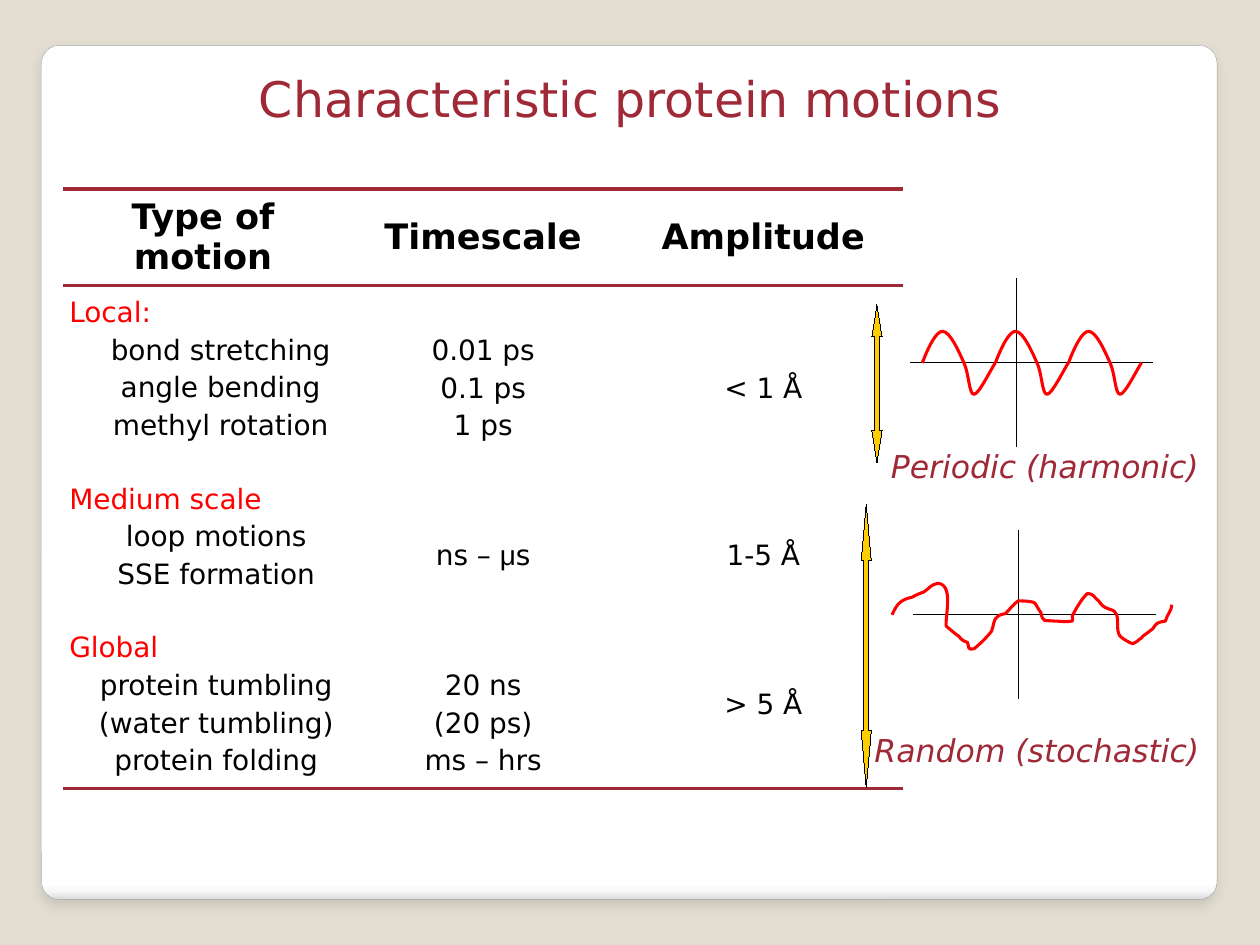
from dataclasses import dataclass
from itertools import groupby

from lxml.etree import SubElement
from pptx import Presentation
from pptx.dml.color import RGBColor
from pptx.enum.shapes import MSO_CONNECTOR, MSO_SHAPE
from pptx.enum.text import MSO_ANCHOR, PP_ALIGN
from pptx.oxml import parse_xml
from pptx.oxml.ns import nsdecls, qn
from pptx.util import Inches, Pt

COLORS = {
    "background": "E3DED1", "white": "FFFFFF", "edge": "A4A3A3",
    "shade": "DADADA", "shade_end": "F7F7F7", "shadow": "808080",
    "accent": "9F2936", "text": "000000", "red": "FF0000", "arrow": "FFCC00",
}
FONT = "DejaVu Sans"
HEADERS = ["Type of motion", "Timescale", "Amplitude"]
BLANK_LINE = 0.3  # offset that lines values up with the items below a heading
HEADER_HEIGHT, ROW_HEIGHT = 0.76, 1.33


@dataclass
class MotionRow:
    heading: str
    items: list[str]
    indent: float
    timescales: list[str]
    amplitude: str
    amplitude_offset: float = BLANK_LINE


@dataclass
class ScaleArrow:
    x: float
    top: float
    height: float
    head: float


@dataclass
class MotionPlot:
    """Axes given by centre point, with curves as a start and Bézier triples."""
    x: float
    y: float
    left: float
    curves: list[list[tuple[float, float]]]
    label: str
    label_box: tuple[float, float, float, float]


ROWS = [
    MotionRow("Local:", ["bond stretching", "angle bending", "methyl rotation"], 0.28,
              ["0.01 ps", "0.1 ps", "1 ps"], "< 1 Å"),
    MotionRow("Medium scale", ["loop motions", "SSE formation"], 0.21,
              ["ns – μs"], "1-5 Å"),
    MotionRow("Global", ["protein tumbling", "(water tumbling)", "protein folding"], 0.21,
              ["20 ns", "(20 ps)", "ms – hrs"], "> 5 Å", 0),
]
ARROWS = [ScaleArrow(6.96, 2.42, 1.25, 0.25), ScaleArrow(6.875, 4, 2.25, 0.45)]

PERIOD = 0.58
WAVE = [(7.32, 2.88), (7.37, 2.75), (7.43, 2.63), (7.48, 2.63),
        (7.54, 2.63), (7.61, 2.79), (7.65, 2.88), (7.69, 2.96), (7.69, 3.13),
        (7.73, 3.13), (7.77, 3.13), (7.87, 2.92), (7.9, 2.88)]
RANDOM_WALK = [
    (7.08, 4.88), (7.12, 4.79), (7.15, 4.76), (7.24, 4.74),
    (7.27, 4.72), (7.33, 4.7), (7.33, 4.7), (7.38, 4.67), (7.38, 4.64), (7.45, 4.63),
    (7.57, 4.65), (7.5, 4.89), (7.51, 4.97), (7.51, 4.97), (7.59, 5.04), (7.61, 5.05),
    (7.63, 5.08), (7.65, 5.09), (7.68, 5.1), (7.69, 5.14), (7.68, 5.16), (7.73, 5.15),
    (7.78, 5.11), (7.83, 5.06), (7.87, 5.01), (7.9, 4.92), (7.88, 4.89), (7.98, 4.87),
    (8.01, 4.84), (8.05, 4.79), (8.08, 4.77), (8.12, 4.77), (8.16, 4.77), (8.2, 4.78),
    (8.22, 4.78), (8.24, 4.84), (8.26, 4.86), (8.28, 4.95), (8.29, 4.92), (8.37, 4.93),
    (8.42, 4.93), (8.46, 4.94), (8.51, 4.93), (8.52, 4.92), (8.51, 4.9), (8.51, 4.89),
    (8.54, 4.83), (8.58, 4.76), (8.63, 4.71), (8.69, 4.72), (8.67, 4.73), (8.72, 4.77),
    (8.74, 4.8), (8.76, 4.82), (8.79, 4.83), (8.81, 4.84), (8.84, 4.84), (8.85, 4.86),
    (8.89, 4.9), (8.85, 5), (8.89, 5.05), (8.91, 5.07), (8.96, 5.1), (8.99, 5.11),
    (9.01, 5.1), (9.03, 5.09), (9.05, 5.07), (9.06, 5.07), (9.06, 5.06), (9.07, 5.05),
    (9.1, 5.03), (9.15, 4.99), (9.15, 4.99), (9.18, 4.94), (9.19, 4.94), (9.25, 4.93),
    (9.26, 4.88), (9.3, 4.85), (9.3, 4.8),
]
PLOTS = [
    MotionPlot(8.07, 2.88, 7.23, [[(x + i * PERIOD, y) for x, y in WAVE] for i in range(3)],
               "Periodic (harmonic)", (7.02, 3.5, 2.58, 0.41)),
    MotionPlot(8.08, 4.88, 7.25, [RANDOM_WALK],
               "Random (stochastic)", (6.89, 5.75, 2.71, 0.41)),
]


def rgb(name: str) -> RGBColor:
    return RGBColor.from_string(COLORS[name])


def set_line(sp, color: str, width: float) -> None:
    sp.line.color.rgb = rgb(color)
    sp.line.width = Pt(width)


def set_hairline(sp) -> None:
    """Give a black line of default width, free of the theme's line style."""
    sp.line.color.rgb = rgb("text")
    sp._element.remove(sp._element.find(qn("p:style")))


def add_run(p, text: str, color: str, size: float, name: str = FONT, **extra) -> None:
    r = p.add_run()
    r.text = text
    for key, value in {"name": name, "size": Pt(size), **extra}.items():
        setattr(r.font, key, value)
    r.font.color.rgb = rgb(color)


def set_margins(frame) -> None:
    for side in ("left", "top", "right", "bottom"):
        setattr(frame, f"margin_{side}", Inches(0.05))


def add_card(s) -> None:
    sp = s.shapes.add_shape(MSO_SHAPE.ROUNDED_RECTANGLE, Inches(0.33), Inches(0.36),
                            Inches(9.33), Inches(6.78))
    sp.adjustments[0] = 0.021
    set_line(sp, "edge", 0.25)
    stops = [(0, "shade"), (1, "shade_end"), (2, "white"), (100, "white")]
    gs = "".join(f'<a:gs pos="{pos * 1000}"><a:srgbClr val="{COLORS[c]}"/></a:gs>'
                 for pos, c in stops)
    sp.line._ln.addprevious(parse_xml(
        f'<a:gradFill {nsdecls("a")} rotWithShape="1"><a:gsLst>{gs}</a:gsLst>'
        '<a:lin ang="16200000" scaled="0"/></a:gradFill>'))
    sp.line._ln.addnext(parse_xml(
        f'<a:effectLst {nsdecls("a")}><a:outerShdw blurRad="{Pt(6)}" dist="{Pt(4)}" '
        f'dir="5400000" algn="tl" rotWithShape="0"><a:srgbClr val="{COLORS["shadow"]}">'
        '<a:alpha val="25000"/></a:srgbClr></a:outerShdw></a:effectLst>'))


def add_text(s, box: tuple, text: str, size: float, wrap: bool, align, **extra) -> None:
    tf = s.shapes.add_textbox(*map(Inches, box)).text_frame
    set_margins(tf)
    tf.word_wrap = wrap
    tf.vertical_anchor = MSO_ANCHOR.MIDDLE if wrap else MSO_ANCHOR.TOP
    p = tf.paragraphs[0]
    p.alignment = align
    add_run(p, text, "accent", size, **extra)


def set_borders(cell, visible: tuple) -> None:
    for tag in ("lnL", "lnR", "lnT", "lnB"):
        ln = SubElement(cell._tc.get_or_add_tcPr(), qn(f"a:{tag}"), w=str(Pt(2.25)))
        if tag in visible:
            SubElement(SubElement(ln, qn("a:solidFill")), qn("a:srgbClr"), val=COLORS["accent"])
        else:
            SubElement(ln, qn("a:noFill"))


def fill_cell(cell, lines: list[str], size: float = 16, bold: bool = False, heading: str = "",
              indent: float = 0, offset: float = 0, borders: tuple = ()) -> None:
    """Write centred lines under an optional red heading; offset lowers the text."""
    set_margins(cell)
    cell.margin_top = Inches(0.05 + offset)
    cell.vertical_anchor = MSO_ANCHOR.MIDDLE
    tf = cell.text_frame
    for i, text in enumerate([heading] * bool(heading) + lines):
        p = tf.add_paragraph() if i else tf.paragraphs[0]
        is_heading = bool(heading) and i == 0
        p.alignment = PP_ALIGN.LEFT if is_heading else PP_ALIGN.CENTER
        if i:
            p.space_before = Pt(3)
        if indent and not is_heading:
            p._p.get_or_add_pPr().set("marL", str(Inches(indent)))
        for greek, chars in groupby(text, lambda ch: ch == "μ"):
            add_run(p, "".join(chars), "red" if is_heading else "text", size,
                    "Arial" if greek else FONT, bold=bold)
    set_borders(cell, borders)
    cell.fill.background()


def add_motion_table(s) -> None:
    height = HEADER_HEIGHT + ROW_HEIGHT * len(ROWS)
    table = s.shapes.add_table(len(ROWS) + 1, len(HEADERS), Inches(0.5), Inches(1.5),
                               Inches(6.67), Inches(height)).table
    table.first_row = table.horz_banding = False
    table._tbl.tblPr.find(qn("a:tableStyleId")).text = "{2D5ABB26-0587-4C30-8999-92F81FD0307C}"
    for i, row in enumerate(table.rows):
        row.height = Inches(ROW_HEIGHT if i else HEADER_HEIGHT)
    for col, text in enumerate(HEADERS):
        fill_cell(table.cell(0, col), [text], 20, True, borders=("lnT", "lnB"))
    for i, row in enumerate(ROWS, 1):
        borders = {1: ("lnT",), len(ROWS): ("lnB",)}.get(i, ())
        fill_cell(table.cell(i, 0), row.items, heading=row.heading, indent=row.indent,
                  borders=borders)
        fill_cell(table.cell(i, 1), row.timescales, offset=BLANK_LINE, borders=borders)
        fill_cell(table.cell(i, 2), [row.amplitude], offset=row.amplitude_offset,
                  borders=borders)


def add_outline(s, points: list[tuple[float, float]], close: bool):
    (start, *rest) = [tuple(map(Inches, pt)) for pt in points]
    builder = s.shapes.build_freeform(*start)
    builder.add_line_segments(rest, close=close)
    sp = builder.convert_to_shape()
    sp.shadow.inherit = False
    return sp


def add_scale_arrow(s, arrow: ScaleArrow) -> None:
    bottom = arrow.top + arrow.height
    neck, base = arrow.top + arrow.head, bottom - arrow.head
    side = [(0.04, neck), (0.02, neck), (0.02, base), (0.04, base)]
    points = [(arrow.x, arrow.top), *[(arrow.x + dx, y) for dx, y in side],
              (arrow.x, bottom), *[(arrow.x - dx, y) for dx, y in reversed(side)]]
    sp = add_outline(s, points, True)
    sp.fill.solid()
    sp.fill.fore_color.rgb = rgb("arrow")
    set_hairline(sp)


def add_axis(s, x1: float, y1: float, x2: float, y2: float) -> None:
    sp = s.shapes.add_connector(MSO_CONNECTOR.STRAIGHT, *map(Inches, (x1, y1, x2, y2)))
    set_hairline(sp)
    SubElement(sp._element.spPr, qn("a:effectLst"))


def add_curve(s, points: list[tuple[float, float]]) -> None:
    """Draw an outline whose points, taken in threes, are Bézier segments."""
    sp = add_outline(s, points, False)
    segments = list(sp._element.iter(qn("a:lnTo")))
    for i in range(0, len(segments), 3):
        bezier = SubElement(segments[i].getparent(), qn("a:cubicBezTo"))
        for segment in segments[i:i + 3]:
            bezier.append(segment[0])
            segment.getparent().remove(segment)
    sp.fill.background()
    set_line(sp, "red", 1.75)


def add_plot(s, plot: MotionPlot) -> None:
    add_axis(s, plot.left, plot.y, plot.left + 1.92, plot.y)
    add_axis(s, plot.x, plot.y - 0.67, plot.x, plot.y + 0.66)
    for points in plot.curves:
        add_curve(s, points)
    add_text(s, plot.label_box, plot.label, 18, False, PP_ALIGN.LEFT, italic=True)


prs = Presentation()
prs.slide_width, prs.slide_height = Inches(10), Inches(7.5)
s = prs.slides.add_slide(prs.slide_layouts[6])
s.background.fill.solid()
s.background.fill.fore_color.rgb = rgb("background")
add_card(s)
add_text(s, (0.8, 0.49, 8.4, 0.57), "Characteristic protein motions", 28, True, PP_ALIGN.CENTER)
add_motion_table(s)
for plot, arrow in zip(PLOTS, ARROWS):
    add_plot(s, plot)
    add_scale_arrow(s, arrow)
prs.save("out.pptx")
